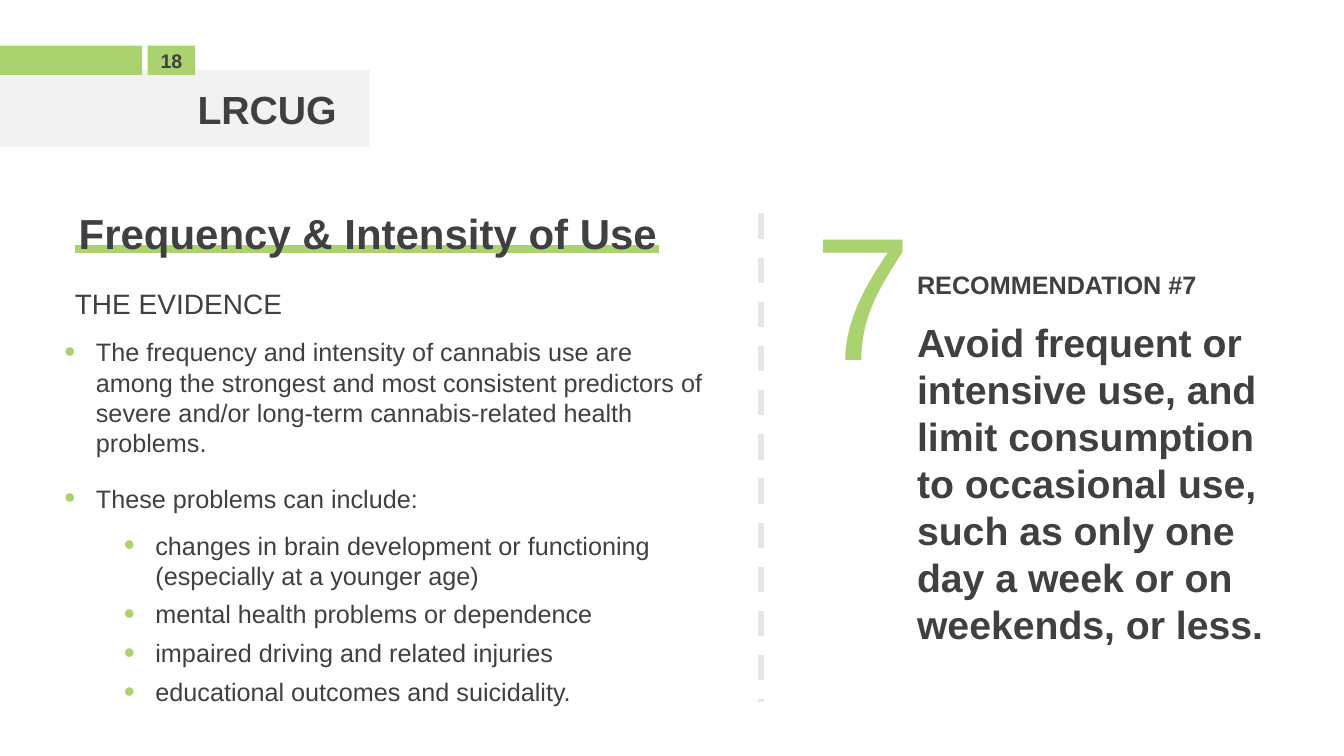
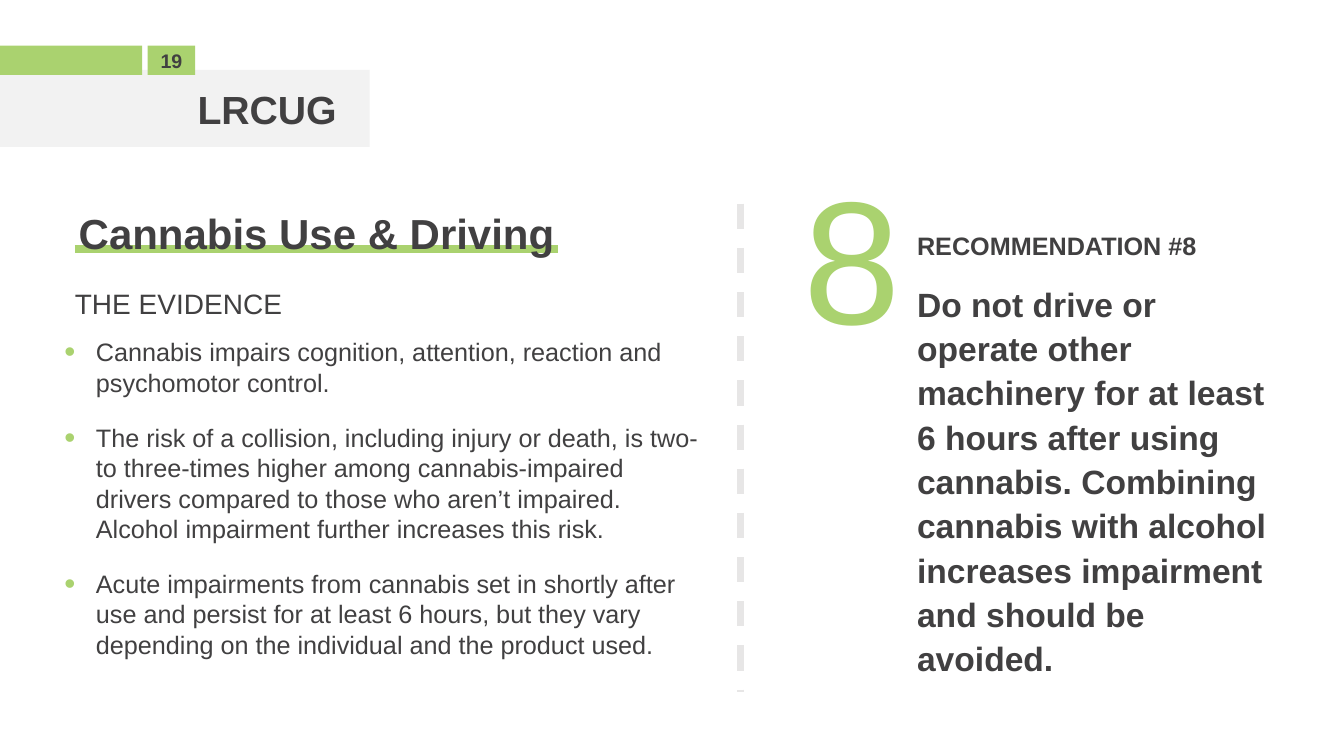
from lxml.etree import SubElement
from pptx import Presentation
from pptx.dml.color import RGBColor
from pptx.enum.dml import MSO_LINE
from pptx.enum.shapes import MSO_CONNECTOR, MSO_SHAPE
from pptx.enum.text import MSO_ANCHOR, MSO_AUTO_SIZE, PP_ALIGN
from pptx.oxml.ns import qn
from pptx.util import Pt

FONT = "Arial"
INK, GREEN, PALE, GREY = "414041", "AAD26F", "F2F2F2", "E7E6E6"
TOP, SUB = 0, 1
INDENT = {TOP: 22.5, SUB: 65}
HANG = 22.5
SECTION = "LRCUG"
LABEL = "THE EVIDENCE"

PAGES = [
    dict(
        page=18, title="Frequency & Intensity of Use", rule=417.5, width=461,
        points=[
            (TOP, 18, "The frequency and intensity of cannabis use are among the strongest "
                      "and most consistent predictors of severe and/or long-term "
                      "cannabis-related health problems."),
            (TOP, 18, "These problems can include:"),
            (SUB, 12, "changes in brain development or functioning "
                      "(especially at a younger age)"),
            (SUB, 6, "mental health problems or dependence"),
            (SUB, 6, "impaired driving and related injuries"),
            (SUB, 6, "educational outcomes and suicidality."),
        ],
        number=7, spot=(574.5, 129), split=(543.5, 152.5),
        advice="Avoid frequent or intensive use, and limit consumption to occasional "
               "use, such as only one day a week or on weekends, or less.",
        box=(648, 142.5, 266.5, 370), size=28, pitch=1,
    ),
    dict(
        page=19, title="Cannabis Use & Driving", rule=345, width=453,
        points=[
            (TOP, 18, "Cannabis impairs cognition, attention, reaction and "
                      "psychomotor control."),
            (TOP, 18, "The risk of a collision, including injury or death, is two- to "
                      "three-times higher among cannabis-impaired drivers compared to "
                      "those who aren’t impaired. Alcohol impairment further increases "
                      "this risk."),
            (TOP, 18, "Acute impairments from cannabis set in shortly after use and "
                      "persist for at least 6 hours, but they vary depending on the "
                      "individual and the product used."),
        ],
        number=8, spot=(566.5, 103), split=(529, 145.5),
        advice="Do not drive or operate other machinery for at least 6 hours after "
               "using cannabis. Combining cannabis with alcohol increases impairment "
               "and should be avoided.",
        box=(648, 121, 274, 405), size=24, pitch=1.1,
    ),
]


def rgb(code):
    return RGBColor.from_string(code)


def place(shape, *box):
    shape.left, shape.top, shape.width, shape.height = map(Pt, box)


def setup(frame, anchor=MSO_ANCHOR.TOP, inset=None):
    frame.word_wrap = True
    frame.auto_size = MSO_AUTO_SIZE.NONE
    frame.vertical_anchor = anchor
    if inset is not None:
        frame.margin_left = frame.margin_right = Pt(inset)
        frame.margin_top = frame.margin_bottom = Pt(inset)


def write(frame, rows, align=PP_ALIGN.LEFT, pitch=1):
    for i, (text, size, bold, color, before) in enumerate(rows):
        para = frame.add_paragraph() if i else frame.paragraphs[0]
        para.text = text
        para.alignment = align
        para.line_spacing = pitch
        para.space_before = Pt(before)
        font = para.font
        font.name, font.size, font.bold = FONT, Pt(size), bold
        font.color.rgb = rgb(color)


def label(slide, box, rows, anchor=MSO_ANCHOR.TOP, inset=None, pitch=1):
    frame = slide.shapes.add_textbox(*map(Pt, box)).text_frame
    setup(frame, anchor, inset)
    write(frame, rows, pitch=pitch)


def block(slide, box, color):
    shape = slide.shapes.add_shape(MSO_SHAPE.RECTANGLE, *map(Pt, box))
    shape.shadow.inherit = False
    shape.fill.solid()
    shape.fill.fore_color.rgb = rgb(color)
    shape.line.fill.background()
    setup(shape.text_frame, MSO_ANCHOR.MIDDLE, 0)
    return shape.text_frame


def stroke(slide, ends, color, width):
    line = slide.shapes.add_connector(MSO_CONNECTOR.STRAIGHT, *map(Pt, ends))
    line.line.color.rgb = rgb(color)
    line.line.width = Pt(width)
    SubElement(line._element.spPr, qn("a:effectLst"))
    return line


def bullet(para, level):
    props = para._p.get_or_add_pPr()
    props.set("marL", str(Pt(INDENT[level])))
    props.set("indent", str(-Pt(HANG)))
    tint = SubElement(props, qn("a:buClr"))
    SubElement(tint, qn("a:srgbClr"), val=GREEN)
    SubElement(props, qn("a:buSzPct"), val="125000")
    SubElement(props, qn("a:buFont"), typeface=FONT)
    SubElement(props, qn("a:buChar"), char="•")


def header(slide, page):
    band = block(slide, (0, 50, 264, 55), PALE)
    band.margin_right = Pt(23.5)
    write(band, [(SECTION, 28, True, INK, 0)], PP_ALIGN.RIGHT)
    block(slide, (0, 32.5, 101.5, 21), GREEN)
    badge = block(slide, (105.5, 32.5, 34, 21), GREEN)
    write(badge, [(str(page), 14, True, INK, 0)], PP_ALIGN.CENTER)


def evidence(slide, data):
    title, body = slide.placeholders
    place(title, 49, 144.5, data["rule"] + 25, 44)
    setup(title.text_frame)
    write(title.text_frame, [(data["title"], 30, True, INK, 0)])
    rule = stroke(slide, (53.5, 178, 53.5 + data["rule"], 178), GREEN, 6)
    slide.shapes._spTree.insert(2, rule._element)
    label(slide, (53.5, 204.5, 395, 24.5), [(LABEL, 20, False, INK, 0)], inset=0)
    place(body, 46, 240.5, data["width"], 265.5)
    setup(body.text_frame, inset=0)
    points = data["points"]
    write(body.text_frame, [(text, 18, False, INK, gap) for _, gap, text in points])
    for para, (level, _, _) in zip(body.text_frame.paragraphs, points):
        bullet(para, level)


def advise(slide, data):
    number = data["number"]
    label(slide, (*data["spot"], 111.5, 158.5), [(str(number), 125, False, GREEN, 0)])
    rows = [(f"RECOMMENDATION #{number}", 18, True, INK, 0),
            (data["advice"], data["size"], True, INK, 13.5)]
    label(slide, data["box"], rows, MSO_ANCHOR.MIDDLE, pitch=data["pitch"])
    x, y = data["split"]
    split = stroke(slide, (x, y, x, y + 349), GREY, 4.5)
    split.line.dash_style = MSO_LINE.DASH


def main():
    deck = Presentation()
    deck.slide_width, deck.slide_height = Pt(960), Pt(540)
    for data in PAGES:
        slide = deck.slides.add_slide(deck.slide_layouts[1])
        header(slide, data["page"])
        evidence(slide, data)
        advise(slide, data)
    deck.save("out.pptx")


if __name__ == "__main__":
    main()
